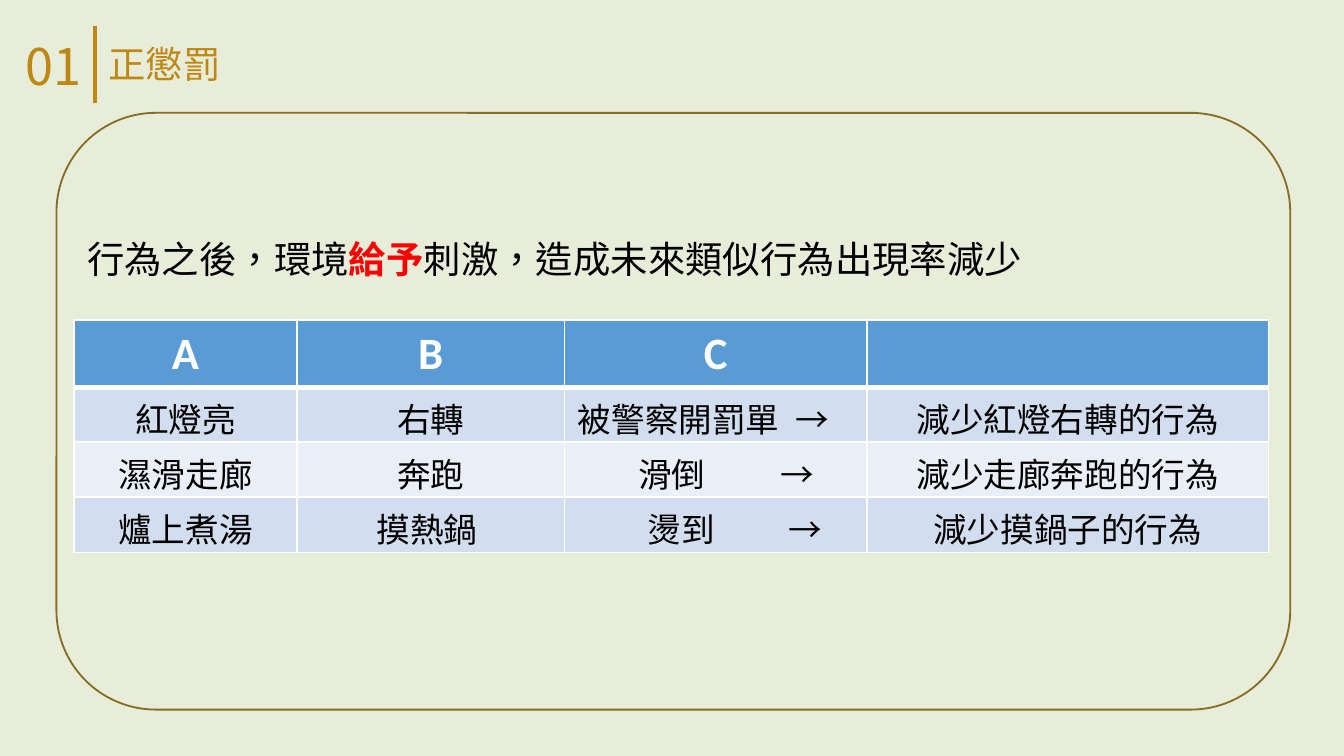
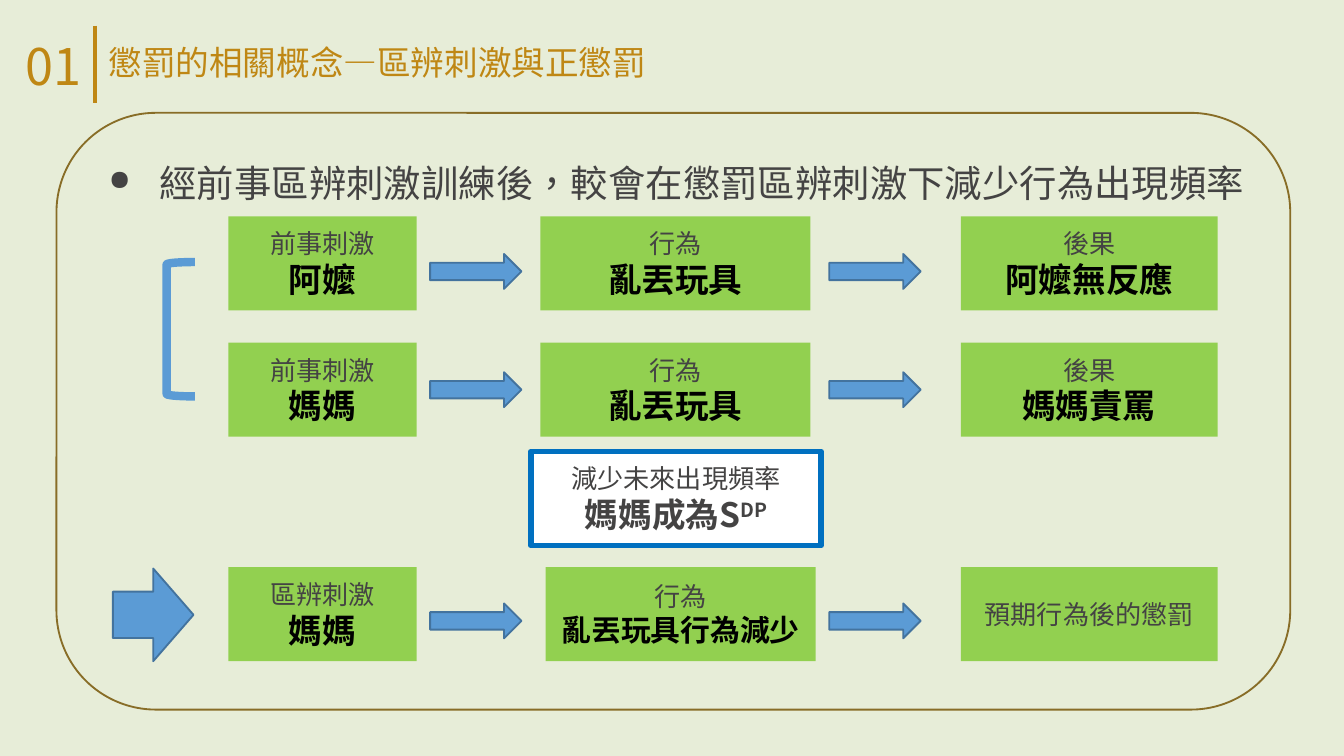
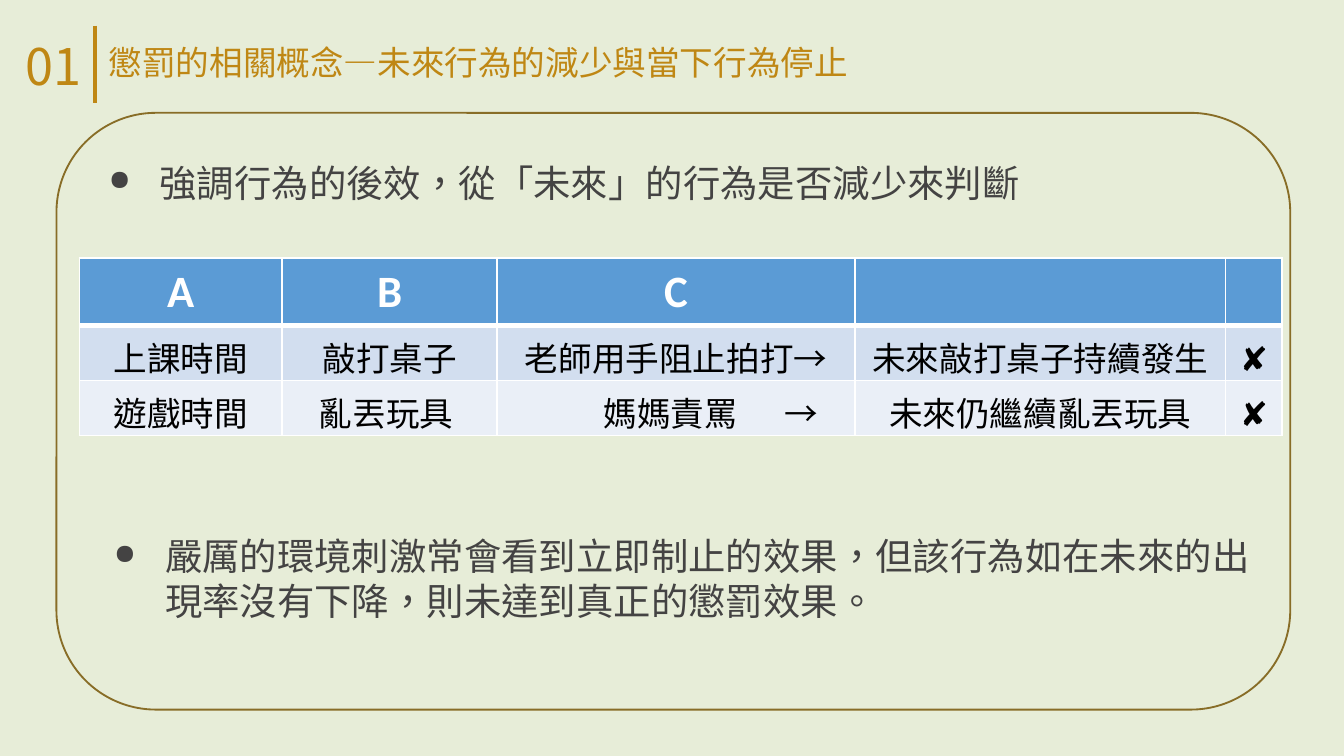
import typing

import lxml.etree
import pptx
import pptx.dml.color
import pptx.enum.shapes
import pptx.enum.text
import pptx.oxml.ns
import pptx.util

RGBColor = pptx.dml.color.RGBColor
Inches = pptx.util.Inches
SHAPE = pptx.enum.shapes.MSO_SHAPE
ALIGN = pptx.enum.text.PP_ALIGN

PAPER = RGBColor(0xE7, 0xED, 0xD8)
GOLD = RGBColor(0xBF, 0x87, 0x14)
BRONZE = RGBColor(0x88, 0x6D, 0x27)
GREY = RGBColor(0x44, 0x43, 0x43)
BLACK = RGBColor(0x00, 0x00, 0x00)
WHITE = RGBColor(0xFF, 0xFF, 0xFF)
RED = RGBColor(0xFF, 0x00, 0x00)
GREEN = RGBColor(0x92, 0xD0, 0x50)
BLUE = RGBColor(0x5B, 0x9B, 0xD5)
NAVY = RGBColor(0x43, 0x73, 0x9E)
FRAME = RGBColor(0x00, 0x70, 0xC0)
BANDS = (RGBColor(0xD2, 0xDE, 0xEF), RGBColor(0xEA, 0xEF, 0xF7))

FONT = "Noto Sans CJK SC"
HEAD_FONT = "Calibri"
LEADING = 1.2
HEAD_TALL = 0.49
ROW_TALL = 0.41


class Box(typing.NamedTuple):
    left: float
    top: float
    width: float
    height: float


class Piece(typing.NamedTuple):
    text: str
    size: float
    color: RGBColor = GREY
    bold: bool = False
    font: str = FONT
    raised: bool = False


class Entry(typing.NamedTuple):
    text: str
    left: float = 0.1
    tab: float = 0


class Flow(typing.NamedTuple):
    top: float
    arrow: float
    middle: float
    notes: tuple[tuple[tuple[Piece, ...], ...], ...]


def place(box: Box) -> list[int]:
    return [Inches(side) for side in box]


def child(parent, tag: str, **traits: str):
    node = lxml.etree.SubElement(parent, pptx.oxml.ns.qn(tag))
    for name, value in traits.items():
        node.set(name, value)
    return node


def write(para, *pieces: Piece) -> None:
    para.text = pieces[0].text
    for piece in pieces[1:]:
        para.add_run().text = piece.text
    for run, piece in zip(para.runs, pieces):
        run.font.size = pptx.util.Pt(piece.size)
        run.font.bold = piece.bold
        run.font.color.rgb = piece.color
        run.font.name = piece.font
        props = run._r.get_or_add_rPr()
        props.set("lang", "zh-TW")
        if piece.raised:
            props.set("baseline", "30000")
        child(props, "a:ea", typeface=piece.font)


def lead(para, size: float) -> None:
    para.line_spacing = pptx.util.Pt(size * LEADING)


def add_text(slide, box: Box, *pieces: Piece, wrap: bool = True):
    shape = slide.shapes.add_textbox(*place(box))
    frame = shape.text_frame
    frame.word_wrap = wrap
    frame.auto_size = pptx.enum.text.MSO_AUTO_SIZE.SHAPE_TO_FIT_TEXT
    write(frame.paragraphs[0], *pieces)
    lead(frame.paragraphs[0], pieces[0].size)
    return frame


def add_point(slide, box: Box, text: str) -> None:
    frame = add_text(slide, box, Piece(text, 20))
    props = frame.paragraphs[0]._p.get_or_add_pPr()
    indent = Inches(0.38)
    props.set("marL", str(indent))
    props.set("indent", str(-indent))
    child(props, "a:buSzPct", val="75000")
    child(props, "a:buChar", char="●")


def add_form(slide, kind, box: Box, fill: RGBColor | None = None,
             line: RGBColor | None = None, weight: float = 1):
    shape = slide.shapes.add_shape(kind, *place(box))
    shape.shadow.inherit = False
    if fill is None:
        shape.fill.background()
    else:
        shape.fill.solid()
        shape.fill.fore_color.rgb = fill
    if line is None:
        shape.line.fill.background()
    else:
        shape.line.color.rgb = line
        shape.line.width = pptx.util.Pt(weight)
    return shape


def add_card(slide, box: Box, lines: typing.Sequence[tuple[Piece, ...]],
             fill: RGBColor = GREEN, line: RGBColor | None = None) -> None:
    frame = add_form(slide, SHAPE.RECTANGLE, box, fill, line, 3).text_frame
    frame.word_wrap = True
    frame.vertical_anchor = pptx.enum.text.MSO_ANCHOR.MIDDLE
    for index, pieces in enumerate(lines):
        para = frame.add_paragraph() if index else frame.paragraphs[0]
        para.alignment = ALIGN.CENTER
        write(para, *pieces)
        lead(para, pieces[0].size)


def add_arrow(slide, box: Box) -> None:
    add_form(slide, SHAPE.RIGHT_ARROW, box, BLUE, NAVY)


def edge(cell, top: float, bottom: float) -> None:
    props = cell._tc.get_or_add_tcPr()
    for tag, weight in (("a:lnL", 1), ("a:lnR", 1), ("a:lnT", top), ("a:lnB", bottom)):
        line = child(props, tag, w=str(pptx.util.Pt(weight)))
        child(child(line, "a:solidFill"), "a:srgbClr", val=str(WHITE))


def add_grid(slide, left: float, top: float, widths: typing.Sequence[float],
             rows: typing.Sequence[typing.Sequence[Entry]]) -> None:
    heads = [Entry(name) for name in "ABC"]
    heads += [Entry("")] * (len(widths) - len(heads))
    full = [heads, *rows]
    box = Box(left, top, sum(widths), HEAD_TALL + ROW_TALL * len(rows))
    table = slide.shapes.add_table(len(full), len(widths), *place(box)).table
    for column, width in zip(table.columns, widths):
        column.width = Inches(width)
    for index, entries in enumerate(full):
        table.rows[index].height = Inches(ROW_TALL if index else HEAD_TALL)
        for column, entry in enumerate(entries):
            cell = table.cell(index, column)
            edge(cell, 3 if index == 1 else 1, 1 if index else 3)
            cell.fill.solid()
            cell.fill.fore_color.rgb = BANDS[(index - 1) % 2] if index else BLUE
            cell.margin_left = Inches(entry.left)
            if index:
                cell.margin_bottom = Inches(0)
            if not entry.text:
                continue
            para = cell.text_frame.paragraphs[0]
            para.alignment = ALIGN.LEFT if entry.tab else ALIGN.CENTER
            if entry.tab:
                stops = child(para._p.get_or_add_pPr(), "a:tabLst")
                child(stops, "a:tab", pos=str(Inches(entry.tab)), algn="l")
            write(para, Piece(entry.text, 18, BLACK) if index
                  else Piece(entry.text, 24, WHITE, True, HEAD_FONT))


def add_page(deck, title: str, size: float, box: Box):
    slide = deck.slides.add_slide(deck.slide_layouts[6])
    slide.background.fill.solid()
    slide.background.fill.fore_color.rgb = PAPER
    add_text(slide, box, Piece(title, size, GOLD), wrap=False)
    frame = add_text(slide, Box(0.12, 0.22, 0.6, 0.53), Piece("01", 27, GOLD), wrap=False)
    frame.margin_left = frame.margin_right = Inches(0.07)
    frame.margin_top = frame.margin_bottom = Inches(0.04)
    rule = slide.shapes.add_connector(
        pptx.enum.shapes.MSO_CONNECTOR.STRAIGHT,
        Inches(0.71), Inches(0.19), Inches(0.71), Inches(0.77))
    rule.line.color.rgb = GOLD
    rule.line.width = pptx.util.Pt(2.25)
    child(rule._element.spPr, "a:effectLst")
    add_form(slide, SHAPE.ROUNDED_RECTANGLE, Box(0.42, 0.84, 9.18, 4.44), line=BRONZE)
    return slide


def pair(label: str, name: str, size: float = 18) -> tuple[tuple[Piece, ...], ...]:
    return (Piece(label, 14),), (Piece(name, size, BLACK, True),)


def build_first(deck) -> None:
    slide = add_page(deck, "正懲罰", 20, Box(0.71, 0.26, 1.04, 0.44))
    add_text(slide, Box(0.55, 1.71, 8.5, 0.67),
             Piece("行為之後，環境", 20, BLACK),
             Piece("給予", 20, RED, True),
             Piece("刺激，造成未來類似行為出現率減少", 20, BLACK))
    add_grid(slide, 0.55, 2.38, (1.66, 1.99, 2.25, 2.99), (
        (Entry("紅燈亮"), Entry("右轉"),
         Entry("被警察開罰單\t→", 0.1, 1.62), Entry("減少紅燈右轉的行為")),
        (Entry("濕滑走廊"), Entry("奔跑"),
         Entry("滑倒\t→", 0.55, 1.06), Entry("減少走廊奔跑的行為")),
        (Entry("爐上煮湯"), Entry("摸熱鍋 "),
         Entry("燙到\t→", 0.62, 1.05), Entry("減少摸鍋子的行為")),
    ))


def build_second(deck) -> None:
    slide = add_page(deck, "懲罰的相關概念—區辨刺激與正懲罰", 18, Box(0.71, 0.26, 4.26, 0.4))
    add_point(slide, Box(0.71, 1.14, 8.83, 0.59),
              "經前事區辨刺激訓練後，較會在懲罰區辨刺激下減少行為出現頻率")
    flows = (
        Flow(1.61, 1.89, 4.02, (pair("前事刺激", "阿嬤"), pair("行為", "亂丟玩具"),
                                pair("後果", "阿嬤無反應"))),
        Flow(2.55, 2.77, 4.02, (pair("前事刺激", "媽媽"), pair("行為", "亂丟玩具"),
                                pair("後果", "媽媽責罵"))),
        Flow(4.22, 4.49, 4.06, (pair("區辨刺激", "媽媽"),
                                pair("行為", "亂丟玩具行為減少", 16),
                                ((Piece("預期行為後的懲罰", 14),),))),
    )
    for flow in flows:
        spans = ((1.7, 1.4), (flow.middle, 2.01), (7.15, 1.91))
        for (left, width), lines in zip(spans, flow.notes):
            add_card(slide, Box(left, flow.top, width, 0.7), lines)
        for left in (3.2, 6.17):
            add_arrow(slide, Box(left, flow.arrow, 0.68, 0.26))
    add_card(slide, Box(3.95, 3.36, 2.16, 0.7), (
        (Piece("減少未來出現頻率", 14),),
        (Piece("媽媽成為S", 18, bold=True), Piece("DP", 18, bold=True, raised=True)),
    ), WHITE, FRAME)
    add_form(slide, SHAPE.LEFT_BRACKET, Box(1.24, 1.95, 0.21, 1), line=BLUE, weight=4.5)
    add_arrow(slide, Box(0.84, 4.23, 0.6, 0.69))


def build_third(deck) -> None:
    slide = add_page(deck, "懲罰的相關概念—未來行為的減少與當下行為停止", 18,
                     Box(0.71, 0.26, 5.78, 0.4))
    add_grid(slide, 0.59, 1.92, (1.51, 1.6, 2.66, 2.76, 0.42), (
        (Entry("上課時間"), Entry("敲打桌子"), Entry("老師用手阻止拍打→"),
         Entry("未來敲打桌子持續發生"), Entry("✘")),
        (Entry("遊戲時間"), Entry("亂丟玩具 "), Entry("媽媽責罵\t→", 0.79, 1.35),
         Entry("未來仍繼續亂丟玩具"), Entry("✘")),
    ))
    add_point(slide, Box(0.71, 1.14, 8.83, 0.53),
              "強調行為的後效，從「未來」的行為是否減少來判斷")
    add_point(slide, Box(0.75, 3.92, 8.83, 0.77),
              "嚴厲的環境刺激常會看到立即制止的效果，但該行為如在未來的出現率沒有下降，則未達到真正的懲罰效果。")


def main() -> None:
    deck = pptx.Presentation()
    deck.slide_width = Inches(10)
    deck.slide_height = deck.slide_width * 9 // 16
    build_first(deck)
    build_second(deck)
    build_third(deck)
    deck.save("out.pptx")


if __name__ == "__main__":
    main()
